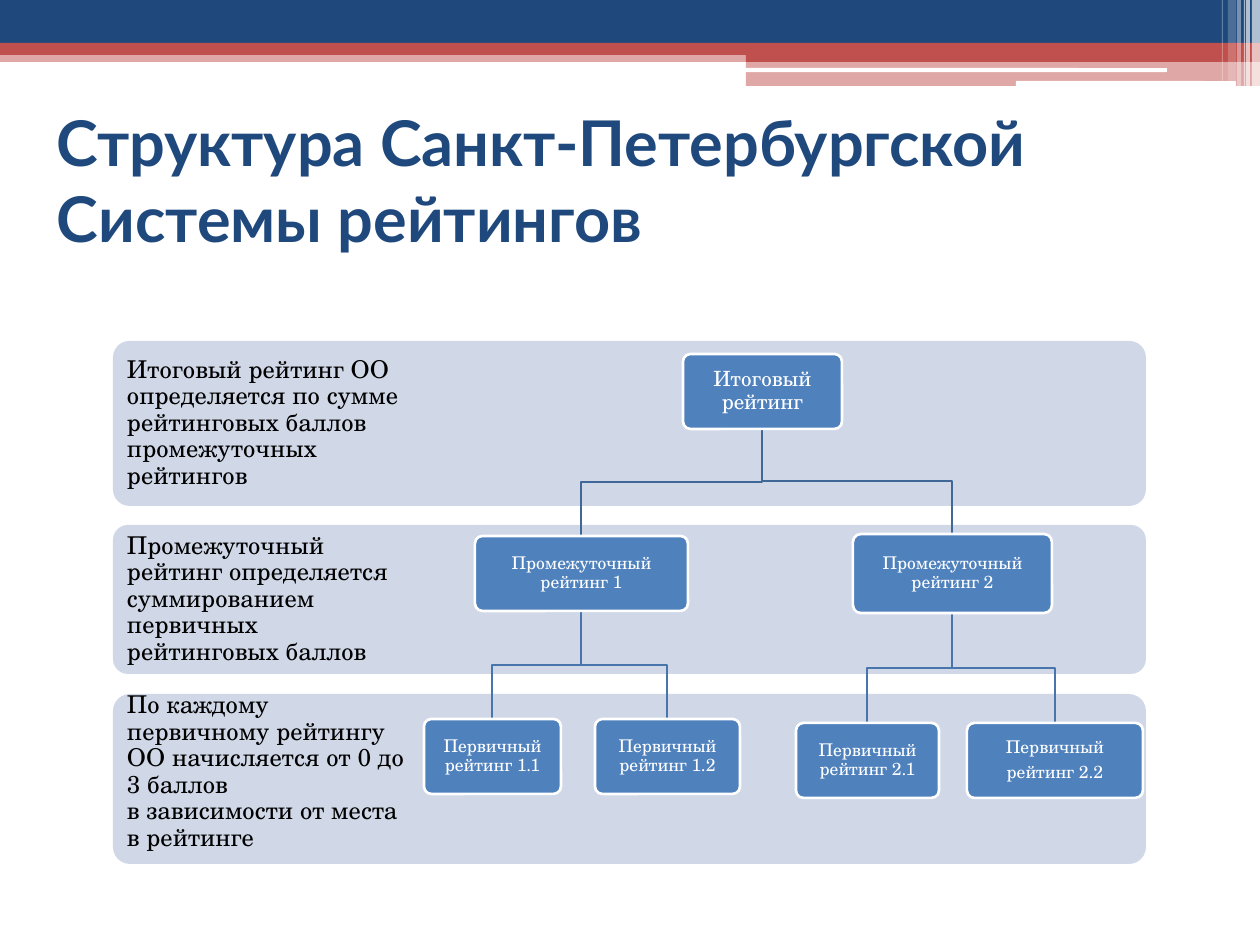
from dataclasses import dataclass

from lxml import etree
from pptx import Presentation
from pptx.dml.color import RGBColor
from pptx.enum.shapes import MSO_SHAPE
from pptx.enum.text import MSO_ANCHOR, PP_ALIGN
from pptx.oxml.ns import qn
from pptx.util import Pt

PX = 914400 // 126
RECT, ROUND = MSO_SHAPE.RECTANGLE, MSO_SHAPE.ROUNDED_RECTANGLE
LEFT, CENTER = PP_ALIGN.LEFT, PP_ALIGN.CENTER
MIDDLE = MSO_ANCHOR.MIDDLE


@dataclass(frozen=True)
class Theme:
    navy: str = "1F497D"
    red: str = "C0504D"
    white: str = "FFFFFF"
    black: str = "000000"
    band: str = "D0D8E8"
    node: str = "4F81BD"
    links: tuple = ("3F6797", "4875AC")
    head: str = "Lato"
    body: str = "TeX Gyre Schola"
    title: int = 36
    label: int = 14
    sizes: tuple = (12, 10, 10)
    line: float = 1.5


T = Theme()

# left, top, width, height, colour, opacity in percent
STRIPES = [
    (0, 50, 1260, 12, T.red, 50),
    (0, 0, 1260, 43, T.navy, 100),
    (0, 43, 1260, 12, T.red, 100),
    (746, 49, 514, 13, T.red, 100),
    (746, 61, 514, 25, T.red, 50),
]
PILLS = [(745, 68, 422, 4), (1016, 81, 220, 5)]
# left, width, height, opacity in percent
BARS = [(1252, 8, 86, 65), (1246, 4, 86, 65), (1244, 1, 86, 60),
        (1237, 4, 86, 40), (1228, 8, 81, 20), (1222, 1, 81, 30)]

# top, height, space below the text, text
BANDS = [
    (0, 165, 14, "Итоговый рейтинг ОО определяется по сумме рейтинговых "
                 "баллов промежуточных рейтингов"),
    (184, 149, 14, "Промежуточный рейтинг определяется суммированием "
                   "первичных рейтинговых баллов"),
    (353, 170, 28, "По каждому первичному рейтингу ОО начисляется от 0 до "
                   "3 баллов \vв зависимости от места \vв рейтинге"),
]

# text, box, children
TREE = ("Итоговый рейтинг", (259, 0, 159, 75), [
    ("Промежуточный рейтинг 1", (51, 182, 213, 75), [
        ("Первичный рейтинг 1.1", (0, 365, 137, 75), []),
        ("Первичный рейтинг 1.2", (171, 365, 145, 75), []),
    ]),
    ("Промежуточный рейтинг 2", (429, 180, 199, 79), [
        ("Первичный рейтинг 2.1", (372, 369, 143, 75), []),
        ("Первичный\nрейтинг 2.2", (543, 369, 176, 75), []),
    ]),
])


def rgb(code):
    return RGBColor.from_string(code)


def emu(box):
    return [n * PX for n in box]


def block(slide, kind, box, color, alpha=100):
    shape = slide.shapes.add_shape(kind, *emu(box))
    shape.shadow.inherit = False
    shape.fill.solid()
    shape.fill.fore_color.rgb = rgb(color)
    shape.line.fill.background()
    if alpha < 100:
        tint = shape.fill._xPr.find(".//" + qn("a:srgbClr"))
        etree.SubElement(tint, qn("a:alpha"), val=str(alpha * 1000))
    return shape


def write(shape, text, size, color, align, pads, face=T.body, bold=False, lead=0.9):
    """Fill a shape with text; pads are left, top, right and bottom in px."""
    frame = shape.text_frame
    frame.word_wrap = True
    frame.vertical_anchor = MIDDLE
    (frame.margin_left, frame.margin_top,
     frame.margin_right, frame.margin_bottom) = emu(pads)
    frame.text = text
    for para in frame.paragraphs:
        para.alignment = align
        para.line_spacing = lead
        para.space_after = Pt(round(size * 0.35, 1))
        for gap in para._p.findall(qn("a:br")):
            etree.SubElement(gap, qn("a:rPr"), sz=str(size * 100))
        for run in para.runs:
            run.font.name = face
            run.font.size = Pt(size)
            run.font.bold = bold
            run.font.color.rgb = rgb(color)


def header(slide, x, y):
    for left, top, w, h, color, alpha in STRIPES:
        block(slide, RECT, (x + left, y + top, w, h), color, alpha)
    for left, top, w, h in PILLS:
        block(slide, ROUND, (x + left, y + top, w, h), T.white)
    for left, w, h, alpha in BARS:
        block(slide, RECT, (x + left, y, w, h), T.white, alpha)


def title(slide, box, text):
    shape = slide.shapes.title
    shape.left, shape.top, shape.width, shape.height = emu(box)
    write(shape, text, T.title, T.navy, LEFT, (13, 6, 13, 6), T.head, True, 1.0)


def bands(slide, x, y, w, inner):
    for top, h, low, text in BANDS:
        back = block(slide, ROUND, (x, y + top, w, h), T.band)
        back.adjustments[0] = 0.1
        label = slide.shapes.add_textbox(*emu((x, y + top, inner, h)))
        write(label, text, T.label, T.black, LEFT, (14, 14, 14, low))


def link(slide, start, end, color):
    """Draw a line that goes down, across and down again."""
    (x1, y1), (x2, y2) = start, end
    mid = (y1 + y2) // 2
    pen = slide.shapes.build_freeform(x1, y1, scale=PX)
    pen.add_line_segments([(x1, mid), (x2, mid), (x2, y2)], close=False)
    shape = pen.convert_to_shape()
    shape.shadow.inherit = False
    shape.fill.background()
    shape.line.color.rgb = rgb(color)
    shape.line.width = Pt(T.line)


def tree(slide, x, y, node, level=0):
    text, (left, top, w, h), kids = node
    for kid in kids:
        kx, ky, kw, _ = kid[1]
        link(slide, (x + left + w // 2, y + top + h),
             (x + kx + kw // 2, y + ky), T.links[level])
        tree(slide, x, y, kid, level + 1)
    shape = block(slide, ROUND, (x + left, y + top, w, h), T.node)
    shape.adjustments[0] = 0.1
    shape.line.color.rgb = rgb(T.white)
    shape.line.width = Pt(T.line)
    write(shape, text, T.sizes[level], T.white, CENTER, (5, 5, 5, 5))


def main():
    deck = Presentation()
    deck.slide_width, deck.slide_height = emu((1260, 945))
    slide = deck.slides.add_slide(deck.slide_layouts[5])
    header(slide, 0, 0)
    title(slide, (44, 106, 1134, 147),
          "Структура Санкт-Петербургской Системы рейтингов")
    bands(slide, 113, 341, 1033, 310)
    tree(slide, 424, 354, TREE)
    deck.save("out.pptx")


if __name__ == "__main__":
    main()
